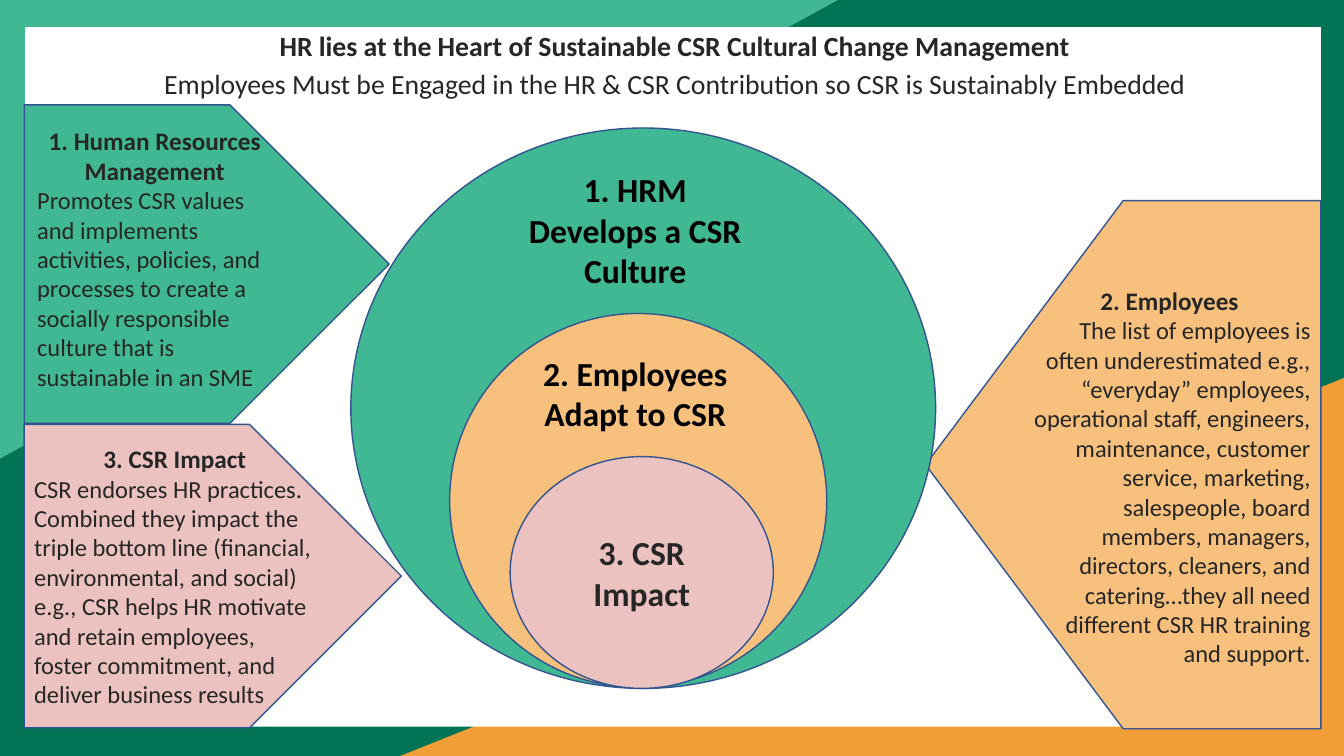
from dataclasses import dataclass

from pptx import Presentation
from pptx.dml.color import RGBColor
from pptx.enum import shapes, text
from pptx.util import Inches, Pt


@dataclass(frozen=True)
class Theme:
    font: str = "Calibri"
    dark_green: str = "027354"
    green: str = "40B894"
    orange: str = "F29E38"
    peach: str = "F7C07D"
    pink: str = "EBC2BF"
    white: str = "FFFFFF"
    outline: str = "325491"
    ink: str = "262626"
    black: str = "000000"
    title_size: float = 19.8
    ring_size: float = 24
    heading_size: float = 18
    body_size: float = 17.5


theme = Theme()
Kind = shapes.MSO_SHAPE
Align = text.PP_ALIGN

deck = Presentation()
deck.slide_width, deck.slide_height = Inches(13.33), Inches(7.5)
page = deck.slides.add_slide(deck.slide_layouts.get_by_name("Title Only"))


def add_panel(kind, place, fill, line=theme.outline, rotation=0):
    """Add a flat filled shape; place is left, top, width, height in inches."""
    panel = page.shapes.add_shape(kind, *map(Inches, place))
    panel.shadow.inherit = False
    panel.rotation = rotation
    panel.fill.solid()
    panel.fill.fore_color.rgb = RGBColor.from_string(fill)
    if line:
        panel.line.color.rgb = RGBColor.from_string(line)
        panel.line.width = Pt(1)
    else:
        panel.line.fill.background()
    return panel


def write(box, lines, color=theme.ink, anchor=text.MSO_ANCHOR.MIDDLE,
          autofit=text.MSO_AUTO_SIZE.NONE, line_spacing=None, space_before=0):
    """Fill box with paragraphs given as (words, size, bold, alignment)."""
    frame = box.text_frame
    frame.word_wrap = True
    frame.auto_size = autofit
    frame.vertical_anchor = anchor
    for index, (words, size, bold, align) in enumerate(lines):
        para = frame.add_paragraph() if index else frame.paragraphs[0]
        para.alignment = align
        para.line_spacing = line_spacing
        para.space_before = Pt(space_before)
        span = para.add_run()
        span.text = words
        span.font.name = theme.font
        span.font.size = Pt(size)
        span.font.bold = bold
        span.font.color.rgb = RGBColor.from_string(color)


# Framed background: two corner triangles behind a white sheet
add_panel(Kind.RECTANGLE, (0, 0, 13.33, 7.5), theme.dark_green, line=None)
for place, fill, rotation in [
    ((3.97, 3.75, 9.36, 3.75), theme.orange, 0),
    ((0, 0, 8.31, 4.55), theme.green, 180),
]:
    corner = add_panel(Kind.ISOSCELES_TRIANGLE, place, fill, None, rotation)
    corner.adjustments[0] = 1
add_panel(Kind.RECTANGLE, (0.25, 0.27, 12.85, 6.94), theme.white, line=None)

# Side arrows and nested circles
add_panel(Kind.PENTAGON, (9.18, 1.99, 3.92, 5.24), theme.peach, rotation=180)
add_panel(Kind.PENTAGON, (0.24, 1.04, 3.62, 3.16), theme.green)
impact_arrow = add_panel(Kind.PENTAGON, (0.24, 4.21, 3.74, 3.01), theme.pink)
for place, fill in [
    ((3.48, 1.27, 5.8, 5.56), theme.green),
    ((4.46, 3.11, 3.74, 3.71), theme.peach),
    ((5.06, 4.53, 2.61, 2.3), theme.pink),
]:
    ring = add_panel(Kind.FLOWCHART_CONNECTOR, place, fill)
impact_ring = ring

write(impact_arrow, [
    ("3. CSR Impact", theme.heading_size, True, Align.CENTER),
    ("CSR endorses HR practices. Combined they impact the triple bottom line "
     "(financial, environmental, and social) e.g., CSR helps HR motivate and "
     "retain employees, foster commitment, and deliver business results",
     theme.body_size, False, Align.LEFT),
])
write(impact_ring, [("3. CSR Impact", theme.ring_size, True, Align.CENTER)])

# Title, brought in front of the white sheet
title = page.shapes.title
title.left, title.top, title.width, title.height = map(
    Inches, (0.95, 0.33, 11.48, 0.92))
title.element.getparent().append(title.element)
write(title, [
    ("HR lies at the Heart of Sustainable CSR Cultural Change Management",
     theme.title_size, True, Align.CENTER),
    ("Employees Must be Engaged in the HR & CSR Contribution so CSR is "
     "Sustainably Embedded", theme.title_size, False, Align.CENTER),
], anchor=text.MSO_ANCHOR.TOP, line_spacing=0.7, space_before=10)

# Labels laid over the rings and arrows
for place, color, lines in [
    ((5.25, 3.45, 2.1, 0.91), theme.black, [
        ("2. Employees Adapt to CSR", theme.ring_size, True, Align.CENTER)]),
    ((5.05, 1.63, 2.5, 1.31), theme.black, [
        ("1. HRM Develops a CSR Culture", theme.ring_size, True, Align.CENTER)]),
    ((10.1, 2.78, 3, 3.94), theme.ink, [
        ("2. Employees", theme.heading_size, True, Align.CENTER),
        ("The list of employees is often underestimated e.g., “everyday” "
         "employees, operational staff, engineers, maintenance, customer "
         "service, marketing, salespeople, board members, managers, directors, "
         "cleaners, and catering…they all need different CSR HR training and "
         "support.", theme.body_size, False, Align.RIGHT)]),
    ((0.27, 1.19, 2.53, 2.83), theme.ink, [
        ("1. Human Resources Management", theme.heading_size, True, Align.CENTER),
        ("Promotes CSR values and implements activities, policies, and "
         "processes to create a socially responsible culture that is "
         "sustainable in an SME", theme.body_size, False, Align.LEFT)]),
]:
    label = page.shapes.add_textbox(*map(Inches, place))
    write(label, lines, color, anchor=text.MSO_ANCHOR.TOP,
          autofit=text.MSO_AUTO_SIZE.SHAPE_TO_FIT_TEXT)

deck.save("out.pptx")
